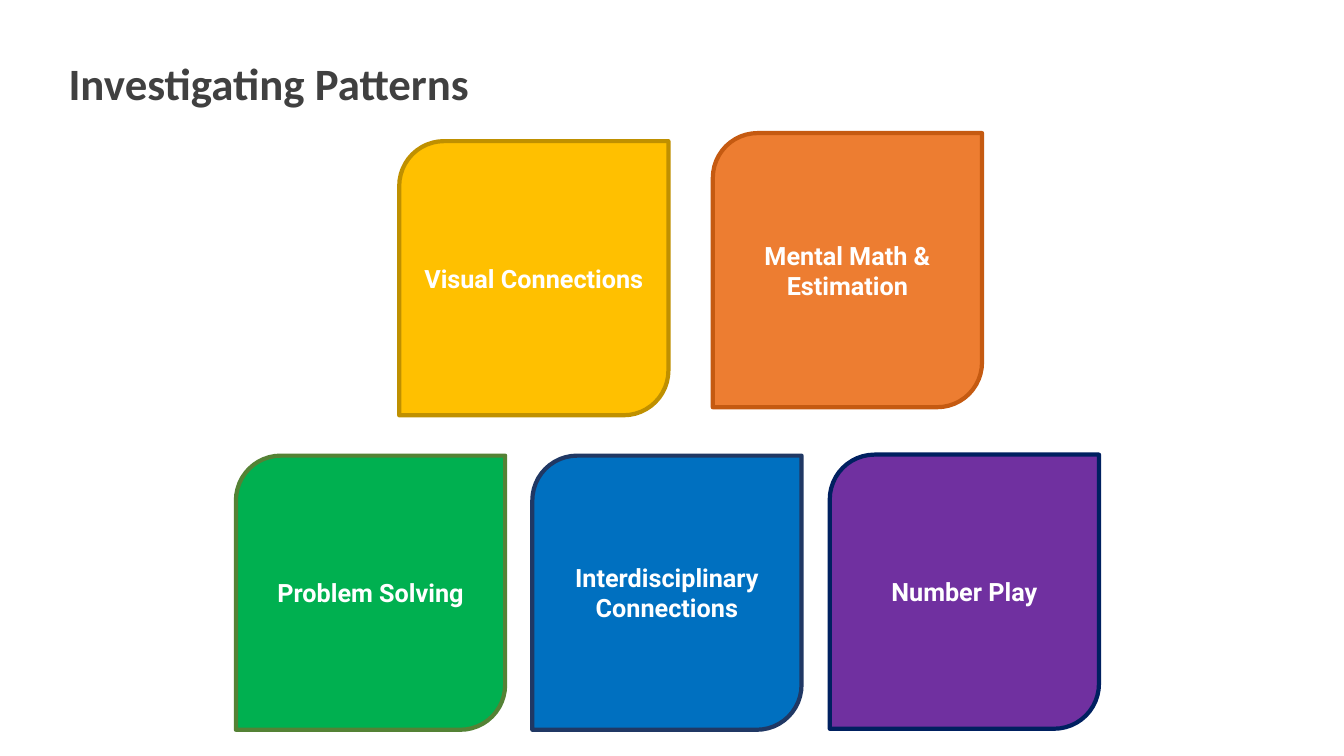
"""Build the Investigating Patterns slide with five coloured topic tiles."""
import pptx
import pptx.dml.color
import pptx.enum.shapes
import pptx.enum.text
import pptx.util

Inches = pptx.util.Inches
Pt = pptx.util.Pt
COLOURS = {
    "title": "404040", "white": "FFFFFF",
    "purple": "7030A0", "navy": "002060",
    "blue": "0070C0", "dark blue": "203864",
    "green": "00B050", "dark green": "548235",
    "orange": "ED7D31", "dark orange": "C55A11",
    "gold": "FFC000", "dark gold": "BF9000",
}
TILE_WIDTH, TILE_HEIGHT = 2.67, 2.72
TILES = [
    ("Number Play", 8.23, 4.51, "purple", "navy"),
    ("Interdisciplinary Connections", 5.28, 4.52, "blue", "dark blue"),
    ("Problem Solving", 2.34, 4.52, "green", "dark green"),
    ("Mental Math & Estimation", 7.07, 1.32, "orange", "dark orange"),
    ("Visual Connections", 3.96, 1.4, "gold", "dark gold"),
]
TITLE_FONT = {"name": "Calibri", "size": Pt(32), "bold": True}
TILE_FONT = {"name": "Roboto", "size": Pt(18), "bold": True}
TITLE_FRAME = {
    "word_wrap": True,
    "auto_size": pptx.enum.text.MSO_AUTO_SIZE.NONE,
    "vertical_anchor": pptx.enum.text.MSO_ANCHOR.BOTTOM,
    "margin_left": Inches(0.13), "margin_right": Inches(0.13),
    "margin_top": Inches(0.13), "margin_bottom": Inches(0.13),
}
TILE_FRAME = {
    "word_wrap": True,
    "vertical_anchor": pptx.enum.text.MSO_ANCHOR.MIDDLE,
}


def colour(name):
    return pptx.dml.color.RGBColor.from_string(COLOURS[name])


def apply_format(target, values):
    for name, value in values.items():
        setattr(target, name, value)


def write_text(shape, text, frame_format, font_format, font_colour, alignment):
    frame = shape.text_frame
    apply_format(frame, frame_format)
    paragraph = frame.paragraphs[0]
    paragraph.text = text
    paragraph.alignment = alignment
    font = paragraph.runs[0].font
    apply_format(font, font_format)
    font.color.rgb = colour(font_colour)
    return paragraph


def set_title(slide, text):
    title = slide.shapes.title
    apply_format(title, {"left": Inches(0.55), "top": Inches(0.62),
                         "width": Inches(8.76), "height": Inches(0.6)})
    paragraph = write_text(title, text, TITLE_FRAME, TITLE_FONT, "title",
                           pptx.enum.text.PP_ALIGN.LEFT)
    apply_format(paragraph, {"line_spacing": 0.9, "space_before": Pt(0)})


def add_tile(slide, text, left, top, fill, outline):
    shape = slide.shapes.add_shape(
        pptx.enum.shapes.MSO_SHAPE.ROUND_2_DIAG_RECTANGLE,
        Inches(left), Inches(top), Inches(TILE_WIDTH), Inches(TILE_HEIGHT))
    shape.shadow.inherit = False
    shape.fill.solid()
    shape.fill.fore_color.rgb = colour(fill)
    shape.line.color.rgb = colour(outline)
    shape.line.width = Pt(3)
    write_text(shape, text, TILE_FRAME, TILE_FONT, "white",
               pptx.enum.text.PP_ALIGN.CENTER)


def main():
    presentation = pptx.Presentation()
    presentation.slide_width = Inches(13.33)
    presentation.slide_height = Inches(7.5)
    slide = presentation.slides.add_slide(presentation.slide_layouts[5])
    set_title(slide, "Investigating Patterns")
    for tile in TILES:
        add_tile(slide, *tile)
    presentation.save("out.pptx")


if __name__ == "__main__":
    main()
